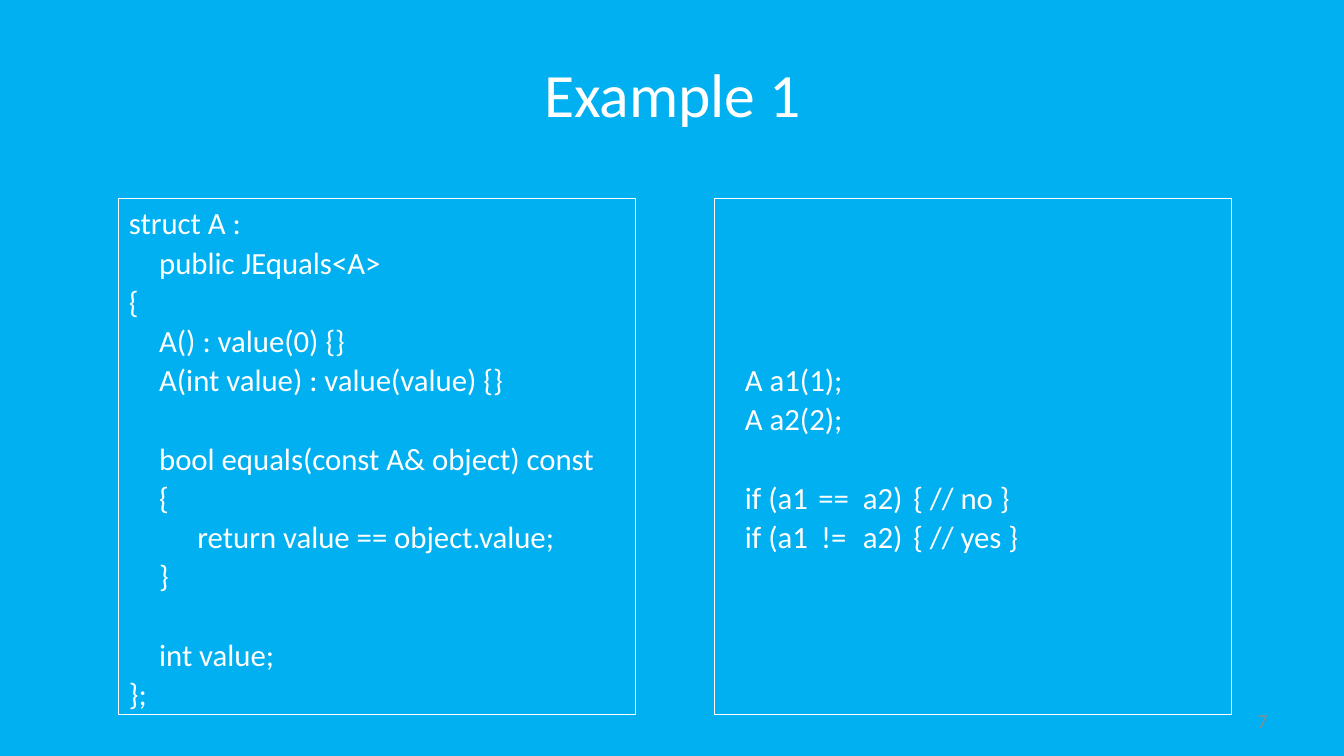
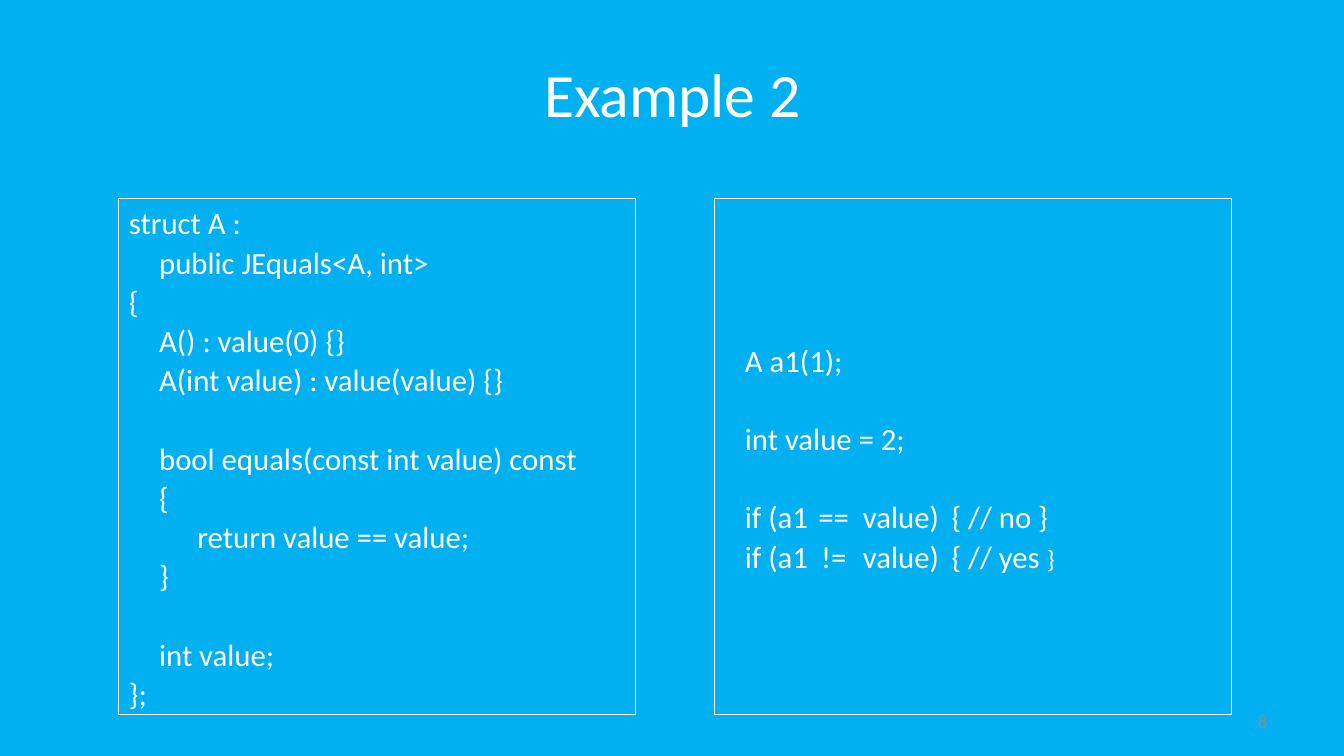
from lxml import etree
from pptx import Presentation
from pptx.dml.color import RGBColor
from pptx.enum.shapes import MSO_SHAPE
from pptx.enum.text import MSO_ANCHOR, PP_ALIGN
from pptx.oxml.ns import qn
from pptx.util import Inches, Pt

# Content: each code panel is a list of groups, parted by one line of space.
# A line given as a tuple ends in smaller text.
FIRST_NUMBER = 7
EXAMPLES = [
    {
        "title": "Example 1",
        "base": "JEquals<A>",
        "parameter": "const A& object",
        "operand": "object.value",
        "usage": [
            ["\tA a1(1);", "\tA a2(2);"],
            ["\tif (a1\t==\ta2)\t{ // no }", "\tif (a1\t!=\ta2)\t{ // yes }"],
        ],
        "brace_tab": 1.87,
    },
    {
        "title": "Example 2",
        "base": "JEquals<A, int>",
        "parameter": "const int value",
        "operand": "value",
        "usage": [
            ["\tA a1(1);"],
            ["\tint value = 2;"],
            ["\tif (a1\t==\tvalue)\t{ // no }", ("\tif (a1\t!=\tvalue)\t{ // yes ", "}")],
        ],
        "brace_tab": 2.25,
    },
]

# Shared style
SKY = RGBColor(0x00, 0xB0, 0xF0)
WHITE = RGBColor(0xFF, 0xFF, 0xFF)
GRAY = RGBColor(0x8C, 0x8C, 0x8C)
FONT = "Calibri"
CODE_SIZE, SMALL_SIZE = 22, 18
LINE_HEIGHT = Pt(28)
PANEL_SIDE = Inches(5.12)
PANEL_TOP = Inches(1.97)
DEFINITION_LEFT, USAGE_LEFT = Inches(1.18), Inches(7.09)
DEFINITION_TABS = [(0.3, "l"), (0.68, "l")]


def definition(example):
    """Return the struct's code as groups of lines."""
    return [
        [
            "struct A :",
            f"\tpublic {example['base']}",
            "{",
            "\tA() : value(0) {}",
            "\tA(int value) : value(value) {}",
        ],
        [
            f"\tbool equals({example['parameter']}) const",
            "\t{",
            f"\t\treturn value == {example['operand']};",
            "\t}",
        ],
        ["\tint value;", "};"],
    ]


def format_run(run, size, color=WHITE):
    run.font.name = FONT
    run.font.size = Pt(size)
    run.font.color.rgb = color


def set_tabs(paragraph, tabs):
    tab_list = etree.SubElement(paragraph._p.get_or_add_pPr(), qn("a:tabLst"))
    for position, alignment in tabs:
        etree.SubElement(tab_list, qn("a:tab"), pos=str(Inches(position)), algn=alignment)


def add_code_panel(slide, left, groups, tabs):
    panel = slide.shapes.add_shape(MSO_SHAPE.RECTANGLE, left, PANEL_TOP, PANEL_SIDE, PANEL_SIDE)
    panel.shadow.inherit = False
    panel.fill.background()
    panel.line.color.rgb = WHITE
    panel.line.width = Pt(0.75)
    text_frame = panel.text_frame
    text_frame.word_wrap = True
    text_frame.vertical_anchor = MSO_ANCHOR.MIDDLE

    paragraph = text_frame.paragraphs[0]
    for group_index, group in enumerate(groups):
        for line_index, line in enumerate(group):
            if group_index or line_index:
                paragraph = text_frame.add_paragraph()
            paragraph.alignment = PP_ALIGN.LEFT
            paragraph.line_spacing = LINE_HEIGHT
            if group_index and not line_index:
                paragraph.space_before = LINE_HEIGHT
            set_tabs(paragraph, tabs)
            parts = (line,) if isinstance(line, str) else line
            for text, size in zip(parts, (CODE_SIZE, SMALL_SIZE)):
                run = paragraph.add_run()
                run.text = text
                format_run(run, size)


def add_title(slide, text):
    title = slide.shapes.title
    title.text_frame.text = text
    format_run(title.text_frame.paragraphs[0].runs[0], 44)


def add_slide_number(slide, number):
    box = slide.shapes.add_textbox(Inches(9.56), Inches(6.95), Inches(3.11), Inches(0.4))
    text_frame = box.text_frame
    text_frame.word_wrap = True
    text_frame.vertical_anchor = MSO_ANCHOR.MIDDLE
    text_frame.text = str(number)
    paragraph = text_frame.paragraphs[0]
    paragraph.alignment = PP_ALIGN.RIGHT
    format_run(paragraph.runs[0], 14, GRAY)


def prepare_layout(presentation):
    """Set the background and title position that every slide inherits."""
    background = presentation.slide_master.background.fill
    background.solid()
    background.fore_color.rgb = SKY
    layout = presentation.slide_layouts.get_by_name("Title Only")
    title = layout.placeholders[0]
    title.left, title.top = Inches(0.67), Inches(0.3)
    title.width, title.height = Inches(12), Inches(1.25)
    return layout


def main():
    presentation = Presentation()
    presentation.slide_width = Inches(13.33)
    presentation.slide_height = Inches(7.5)
    layout = prepare_layout(presentation)

    for number, example in enumerate(EXAMPLES, FIRST_NUMBER):
        slide = presentation.slides.add_slide(layout)
        add_title(slide, example["title"])
        add_slide_number(slide, number)
        add_code_panel(slide, DEFINITION_LEFT, definition(example), DEFINITION_TABS)
        usage_tabs = [(0.2, "l"), (1.08, "ctr"), (1.37, "l"), (example["brace_tab"], "l")]
        add_code_panel(slide, USAGE_LEFT, example["usage"], usage_tabs)

    presentation.save("out.pptx")


if __name__ == "__main__":
    main()
